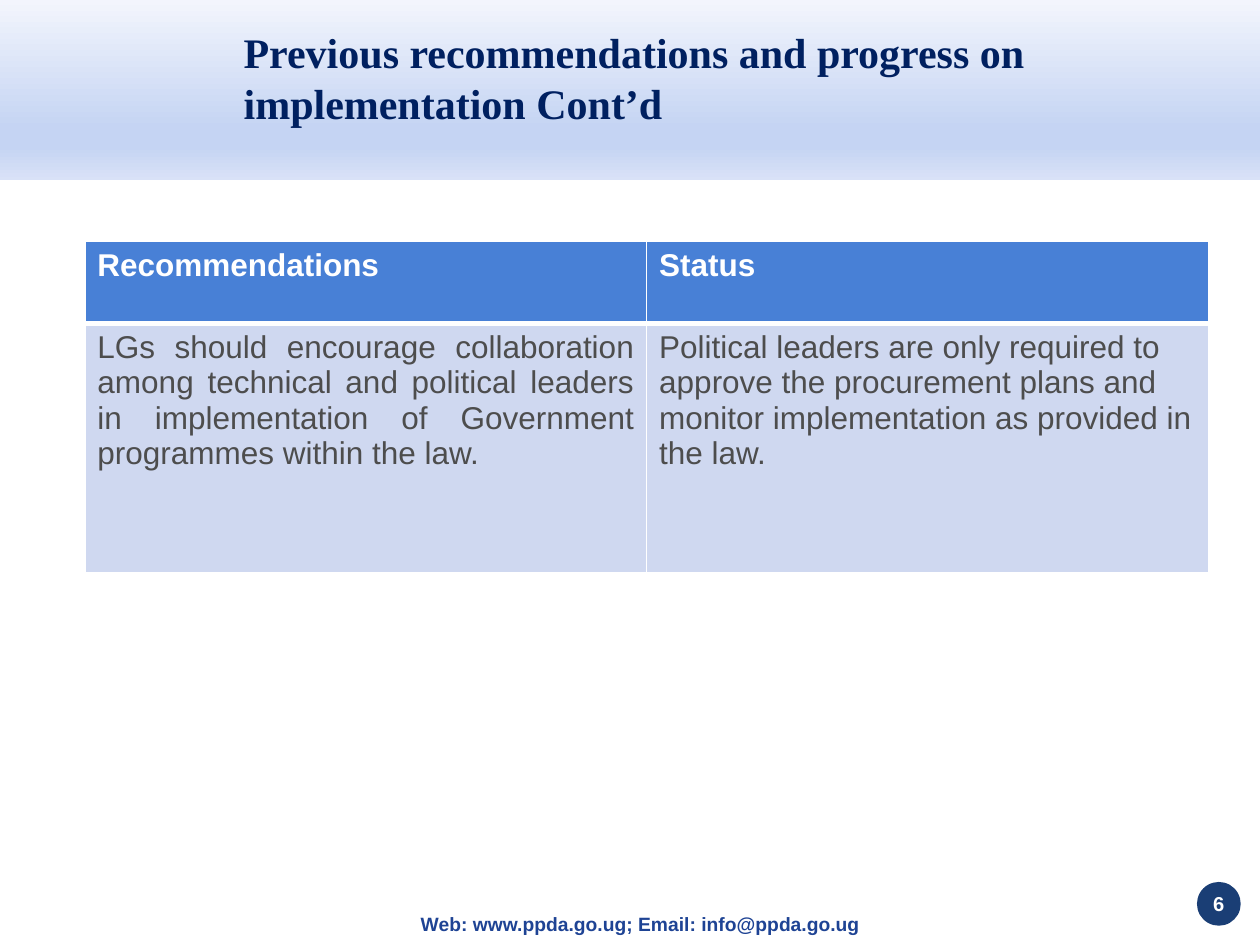
from dataclasses import dataclass

from lxml.etree import SubElement
from pptx import Presentation
from pptx.dml.color import RGBColor
from pptx.enum.shapes import MSO_SHAPE as Shape
from pptx.enum.text import MSO_ANCHOR as Anchor, MSO_AUTO_SIZE as AutoSize, PP_ALIGN as Align
from pptx.oxml.ns import qn
from pptx.util import Pt


@dataclass(frozen=True)
class Theme:
    heading_font: str = "Times New Roman"
    body_font: str = "Arial"
    navy: str = "002060"
    badge: str = "1A3E75"
    contact: str = "1E4394"
    header: str = "4880D6"
    row: str = "CFD8F0"
    text: str = "4D4D4D"
    white: str = "FFFFFF"
    band: tuple = ((0, "F9FAFE"), (74, "C5D4F3"), (83, "C5D4F3"), (100, "D9E2F7"))
    title_size: float = 24
    table_size: float = 18
    footer_size: float = 11
    badge_size: float = 11.5


def write(tf, text, *, font, size, color, bold=False, align=Align.LEFT,
          anchor=Anchor.MIDDLE, inset=None):
    tf.word_wrap = True
    tf.vertical_anchor = anchor
    if inset is not None:
        tf.margin_left = tf.margin_right = tf.margin_top = tf.margin_bottom = Pt(inset)
    p = tf.paragraphs[0]
    p.alignment = align
    r = p.add_run()
    r.text = text
    r.font.name, r.font.size, r.font.bold = font, Pt(size), bold
    r.font.color.rgb = RGBColor.from_string(color)


def add_color(parent, color):
    SubElement(parent, qn("a:srgbClr"), val=color)


def set_borders(cell, color, widths):
    """Draw cell borders; widths maps the sides L, R, T, B to points."""
    tc_pr = cell._tc.get_or_add_tcPr()
    for side in "LRTB":
        ln = SubElement(tc_pr, qn(f"a:ln{side}"), w=str(Pt(widths[side])))
        add_color(SubElement(ln, qn("a:solidFill")), color)


class Deck:
    def __init__(self, theme):
        self.theme = theme
        self.prs = Presentation()
        self.prs.slide_width, self.prs.slide_height = Pt(720), Pt(540)
        self.slide = self.prs.slides.add_slide(self.prs.slide_layouts[5])

    def shape(self, kind, *box):
        sp = self.slide.shapes.add_shape(kind, *map(Pt, box))
        sp.shadow.inherit = False
        sp.line.fill.background()
        return sp

    def band(self, *box):
        """Add a vertical gradient band behind everything else."""
        sp = self.shape(Shape.RECTANGLE, *box)
        sp.fill.gradient()
        sp.fill.gradient_angle = 270
        stops = sp._element.spPr.find(qn("a:gradFill")).find(qn("a:gsLst"))
        stops.clear()
        for percent, color in self.theme.band:
            add_color(SubElement(stops, qn("a:gs"), pos=str(percent * 1000)), color)
        self.slide.shapes._spTree.insert(2, sp._element)

    def title(self, text, *box):
        t, sp = self.theme, self.slide.shapes.title
        sp.left, sp.top, sp.width, sp.height = map(Pt, box)
        sp.text_frame.auto_size = AutoSize.NONE
        write(sp.text_frame, text, font=t.heading_font, size=t.title_size,
              color=t.navy, bold=True)

    def table(self, rows, heights, left, top, width):
        t = self.theme
        table = self.slide.shapes.add_table(
            len(rows), len(rows[0]), *map(Pt, (left, top, width, sum(heights)))).table
        for i, (row, height) in enumerate(zip(rows, heights)):
            table.rows[i].height = Pt(height)
            head = i == 0
            for j, text in enumerate(row):
                cell = table.cell(i, j)
                set_borders(cell, t.white, dict(L=1, R=1, T=1 if head else 3, B=3 if head else 1))
                cell.fill.solid()
                cell.fill.fore_color.rgb = RGBColor.from_string(t.header if head else t.row)
                justified = not head and j == 0
                write(cell.text_frame, text, font=t.body_font, size=t.table_size,
                      color=t.white if head else t.text, bold=head, anchor=Anchor.TOP,
                      align=Align.JUSTIFY if justified else Align.LEFT)

    def footer(self, text, *box):
        t = self.theme
        tf = self.slide.shapes.add_textbox(*map(Pt, box)).text_frame
        write(tf, text, font=t.body_font, size=t.footer_size, color=t.contact,
              bold=True, align=Align.CENTER)

    def page_badge(self, number, *box):
        t = self.theme
        sp = self.shape(Shape.OVAL, *box)
        sp.fill.solid()
        sp.fill.fore_color.rgb = RGBColor.from_string(t.badge)
        write(sp.text_frame, str(number), font=t.body_font, size=t.badge_size,
              color=t.white, bold=True, align=Align.CENTER, inset=2)


def main():
    deck = Deck(Theme())
    deck.band(-1.5, -10, 722, 113)
    deck.title("Previous recommendations and progress on implementation Cont’d",
               132, 24, 516, 40)
    deck.table(
        [("Recommendations", "Status"),
         ("LGs should encourage collaboration among technical and political leaders "
          "in implementation of Government programmes within the law.",
          "Political leaders are only required to approve the procurement plans and "
          "monitor implementation as provided in the law.")],
        (47, 142.5), 48.5, 138, 642)
    deck.footer("Web: www.ppda.go.ug; Email: info@ppda.go.ug", 192, 517.5, 348, 21)
    deck.page_badge(6, 684, 504, 25, 25)
    deck.prs.save("out.pptx")


if __name__ == "__main__":
    main()
